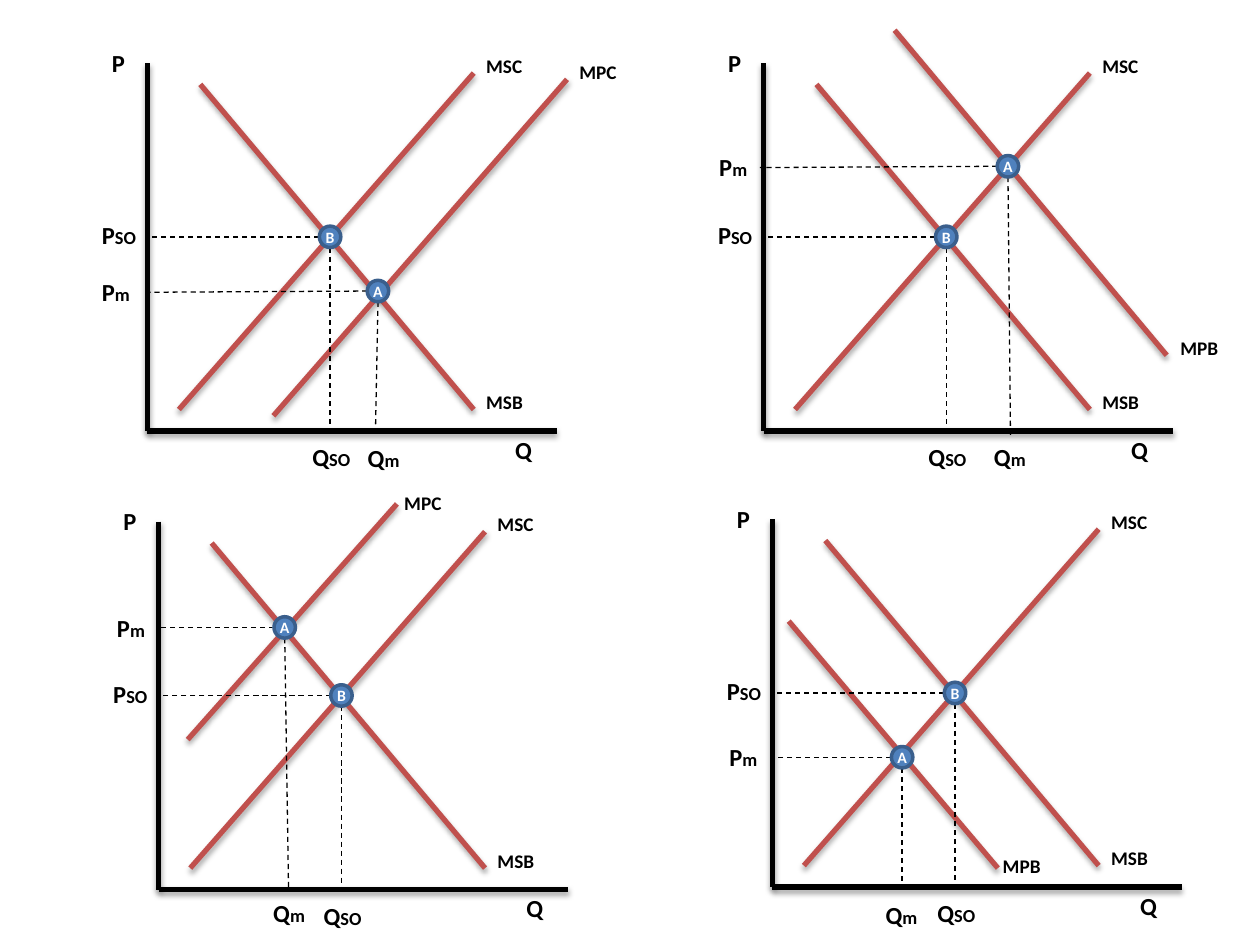
from dataclasses import dataclass

from lxml import etree
from pptx import Presentation
from pptx.dml.color import RGBColor
from pptx.enum.dml import MSO_LINE
from pptx.enum.shapes import MSO_CONNECTOR, MSO_SHAPE
from pptx.enum.text import MSO_ANCHOR, MSO_AUTO_SIZE, PP_ALIGN
from pptx.oxml.ns import qn
from pptx.util import Inches, Pt

STRAIGHT = MSO_CONNECTOR.STRAIGHT
OVAL = MSO_SHAPE.OVAL
DASH = MSO_LINE.DASH
MIDDLE = MSO_ANCHOR.MIDDLE
CENTER = PP_ALIGN.CENTER
GROW = MSO_AUTO_SIZE.SHAPE_TO_FIT_TEXT

COLORS = {"black": "000000", "white": "FFFFFF", "curve": "C0504D",
          "point": "4F81BD", "point_edge": "3A5F8C"}
FONT = "Calibri"
POINT_SIZE = 0.17
AXIS_WIDTH, AXIS_HEIGHT = 3.25, 2.92
OPTIMUM = (1.45, 1.38)
LABEL_WIDTHS = {"P": 0.31, "Q": 0.34, "PSO": 0.48, "QSO": 0.51,
                "Pm": 0.43, "Qm": 0.46}


@dataclass
class Market:
    """One diagram; all places but the origin are relative to the origin."""
    origin: tuple
    curve_name: str
    curve: tuple
    curve_label: tuple
    equilibrium: tuple
    price_end: tuple
    quantity_end: tuple
    price_label: tuple
    quantity_label: tuple


MARKETS = [
    Market((1.17, 0.5), "MPC", ((1, 2.8), (3.33, 0.13)), (3.33, -0.07),
           (1.83, 1.81), (-0.03, 1.82), (1.81, 2.92), (-0.46, 1.65), (1.65, 2.97)),
    Market((6.06, 0.5), "MPB", ((1.04, -0.26), (3.2, 2.32)), (3.21, 2.12),
           (1.94, 0.82), (-0.03, 0.83), (1.96, 2.96), (-0.45, 0.66), (1.73, 2.96)),
    Market((1.26, 4.14), "MPC", ((0.23, 1.73), (1.89, -0.14)), (1.85, -0.29),
           (1, 0.84), (0, 0.84), (1.03, 2.9), (-0.43, 0.68), (0.81, 2.94)),
    Market((6.13, 4.12), "MPB", ((0.13, 0.81), (1.79, 2.77)), (1.73, 2.61),
           (1.03, 1.89), (0.01, 1.89), (1.03, 2.97), (-0.44, 1.72), (0.8, 2.97)),
]


def color(name):
    return RGBColor.from_string(COLORS[name])


def write_text(shape, text, size=11, fill="black", align=None, subscript=""):
    paragraph = shape.text_frame.paragraphs[0]
    if align is not None:
        paragraph.alignment = align
    for part, part_size in ((text, size), (subscript, 10.5)):
        if part:
            run = paragraph.add_run()
            run.text = part
            run.font.name = FONT
            run.font.size = Pt(part_size)
            run.font.bold = True
            run.font.color.rgb = color(fill)


def add_label(slide, place, text, width, height, **text_format):
    left, top = place
    shape = slide.shapes.add_textbox(Inches(left), Inches(top),
                                     Inches(width), Inches(height))
    shape.text_frame.word_wrap = False
    shape.text_frame.auto_size = GROW
    write_text(shape, text, **text_format)


def add_line(slide, start, end, fill="black", width=3, dashed=False):
    connector = slide.shapes.add_connector(
        STRAIGHT, *(Inches(value) for value in (*start, *end)))
    connector.line.color.rgb = color(fill)
    connector.line.width = Pt(width)
    effects = etree.SubElement(connector._element.spPr, qn("a:effectLst"))
    if dashed:
        connector.line.dash_style = DASH
        return
    # Soft shadow straight below the solid lines
    shadow = etree.SubElement(effects, qn("a:outerShdw"), blurRad=str(Pt(3.1)),
                              dist=str(Pt(1.8)), dir="5400000", rotWithShape="0")
    shade = etree.SubElement(shadow, qn("a:srgbClr"), val=COLORS["black"])
    etree.SubElement(shade, qn("a:alpha"), val="35000")


def add_point(slide, center, name):
    left, top = (value - POINT_SIZE / 2 for value in center)
    shape = slide.shapes.add_shape(OVAL, Inches(left), Inches(top),
                                   Inches(POINT_SIZE), Inches(POINT_SIZE))
    shape.shadow.inherit = False
    shape.fill.solid()
    shape.fill.fore_color.rgb = color("point")
    shape.line.color.rgb = color("point_edge")
    shape.line.width = Pt(2)
    frame = shape.text_frame
    frame.margin_left = frame.margin_right = 0
    frame.margin_top = frame.margin_bottom = 0
    frame.word_wrap = False
    frame.vertical_anchor = MIDDLE
    write_text(shape, name, size=9, fill="white", align=CENTER)


def add_market(slide, market):
    def at(place):
        return market.origin[0] + place[0], market.origin[1] + place[1]

    def axis_label(place, letter, subscript=""):
        add_label(slide, at(place), letter, LABEL_WIDTHS[letter + subscript],
                  0.34, size=14, subscript=subscript)

    def intersection(name, center, price_end, quantity_end):
        x, y = center
        radius = POINT_SIZE / 2
        for start, end in (((x, y + radius), quantity_end),
                           ((x - radius, y), price_end)):
            add_line(slide, at(start), at(end), width=0.75, dashed=True)
        add_point(slide, at(center), name)

    # Axes
    corner = (0, AXIS_HEIGHT)
    add_line(slide, at((0, 0)), at(corner))
    add_line(slide, at(corner), at((AXIS_WIDTH, AXIS_HEIGHT)))
    axis_label((-0.38, -0.17), "P")
    axis_label((2.82, 2.9), "Q")

    # Social cost and benefit, and the private curve
    curves = [
        ("MSC", ((0.25, 2.75), (2.59, 0.08)), (2.59, -0.12)),
        ("MSB", ((0.42, 0.17), (2.59, 2.75)), (2.59, 2.55)),
        (market.curve_name, market.curve, market.curve_label),
    ]
    for name, (start, end), place in curves:
        add_line(slide, at(start), at(end), fill="curve")
        add_label(slide, at(place), name, 0.5, 0.29)

    # Social optimum B
    intersection("B", OPTIMUM, (0, OPTIMUM[1]), (OPTIMUM[0], AXIS_HEIGHT))
    axis_label((-0.46, 1.2), "P", "SO")
    axis_label((1.21, 2.96), "Q", "SO")

    # Market equilibrium A
    intersection("A", market.equilibrium, market.price_end, market.quantity_end)
    axis_label(market.price_label, "P", "m")
    axis_label(market.quantity_label, "Q", "m")


def main():
    presentation = Presentation()
    presentation.slide_width = Inches(10)
    presentation.slide_height = Inches(7.5)
    slide = presentation.slides.add_slide(presentation.slide_layouts[6])
    for market in MARKETS:
        add_market(slide, market)
    presentation.save("out.pptx")


if __name__ == "__main__":
    main()
